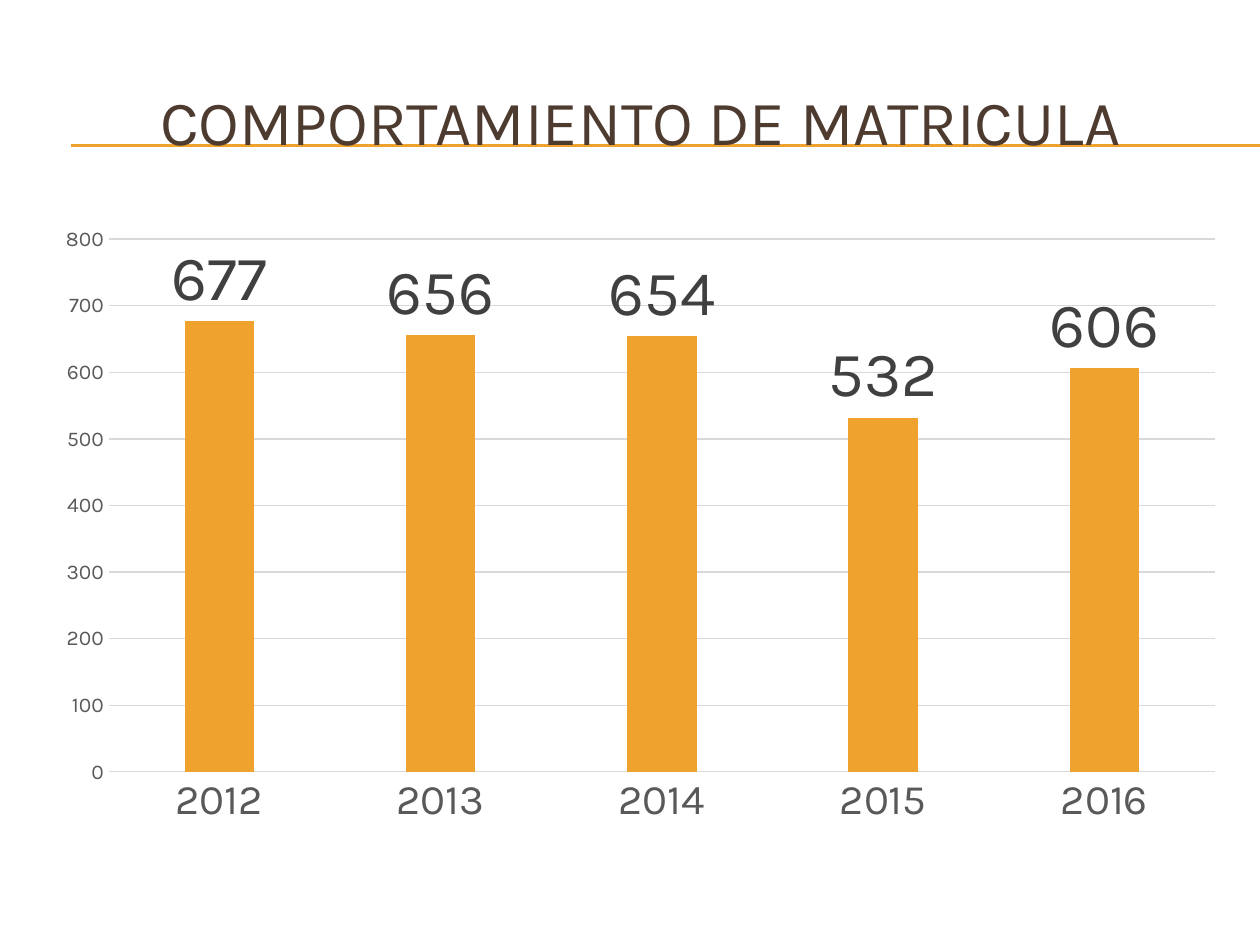
from lxml import etree
from pptx import Presentation
from pptx.chart.data import CategoryChartData
from pptx.dml.color import RGBColor
from pptx.enum.chart import XL_CHART_TYPE as CT, XL_LABEL_POSITION as LP, XL_TICK_MARK as TM
from pptx.enum.shapes import MSO_CONNECTOR
from pptx.enum.text import MSO_ANCHOR, PP_ALIGN
from pptx.oxml.ns import qn
from pptx.util import Pt

TITLE = "COMPORTAMIENTO DE MATRICULA"
ENROLMENT = {"2012": 677, "2013": 656, "2014": 654, "2015": 532, "2016": 606}
FONT = "Karla"
ORANGE, BROWN, GRID = "F0A22E", "4E3B30", "D9D9D9"
AXIS_TEXT, LABEL_TEXT = "595959", "404040"
WIDTH, HEIGHT = 720, 540
LEFT, CONTENT_WIDTH = 24, 684
RULE_LEFT, RULE_TOPS = 40.5, (82.8, 83.5)


def rgb(color):
    return RGBColor.from_string(color)


def set_font(font, size, color):
    font.name, font.size, font.bold = FONT, Pt(size), False
    font.color.rgb = rgb(color)


def set_line(line, color, width=0.75):
    line.color.rgb = rgb(color)
    line.width = Pt(width)


def add_text(slide, text, x, y, w, h, size, color, align=PP_ALIGN.CENTER):
    tf = slide.shapes.add_textbox(Pt(x), Pt(y), Pt(w), Pt(h)).text_frame
    tf.word_wrap = True
    tf.vertical_anchor = MSO_ANCHOR.MIDDLE
    p = tf.paragraphs[0]
    p.alignment = align
    r = p.add_run()
    r.text = text
    set_font(r.font, size, color)


def add_rule(slide, y):
    line = slide.shapes.add_connector(MSO_CONNECTOR.STRAIGHT, Pt(RULE_LEFT), Pt(y), Pt(WIDTH), Pt(y))
    set_line(line.line, ORANGE)
    etree.SubElement(line._element.spPr, qn("a:effectLst"))


def add_enrolment_chart(slide, x, y, w, h):
    data = CategoryChartData()
    data.categories = list(ENROLMENT)
    data.add_series("Series 1", list(ENROLMENT.values()))
    chart = slide.shapes.add_chart(CT.COLUMN_CLUSTERED, Pt(x), Pt(y), Pt(w), Pt(h), data).chart
    chart.has_legend = chart.has_title = False
    set_font(chart.font, 10, "000000")

    for axis, size in ((chart.category_axis, 24), (chart.value_axis, 12)):
        axis.major_tick_mark = axis.minor_tick_mark = TM.NONE
        set_font(axis.tick_labels.font, size, AXIS_TEXT)
    set_line(chart.category_axis.format.line, GRID)
    values = chart.value_axis
    values.minimum_scale, values.maximum_scale, values.major_unit = 0, 800, 100
    values.format.line.fill.background()
    set_line(values.major_gridlines.format.line, GRID)

    plot = chart.plots[0]
    plot.gap_width, plot.overlap, plot.vary_by_categories = 219, -27, False
    series = plot.series[0]
    series.format.fill.solid()
    series.format.fill.fore_color.rgb = rgb(ORANGE)
    labels = series.data_labels
    labels.show_value = True
    labels.position = LP.OUTSIDE_END
    set_font(labels.font, 36, LABEL_TEXT)


prs = Presentation()
prs.slide_width, prs.slide_height = Pt(WIDTH), Pt(HEIGHT)
slide = prs.slides.add_slide(prs.slide_layouts[6])
for top in RULE_TOPS:
    add_rule(slide, top)
add_text(slide, TITLE, LEFT, 36, CONTENT_WIDTH, 66, size=36, color=BROWN)
add_enrolment_chart(slide, LEFT, 122.4, CONTENT_WIDTH, 356.4)
prs.save("out.pptx")
